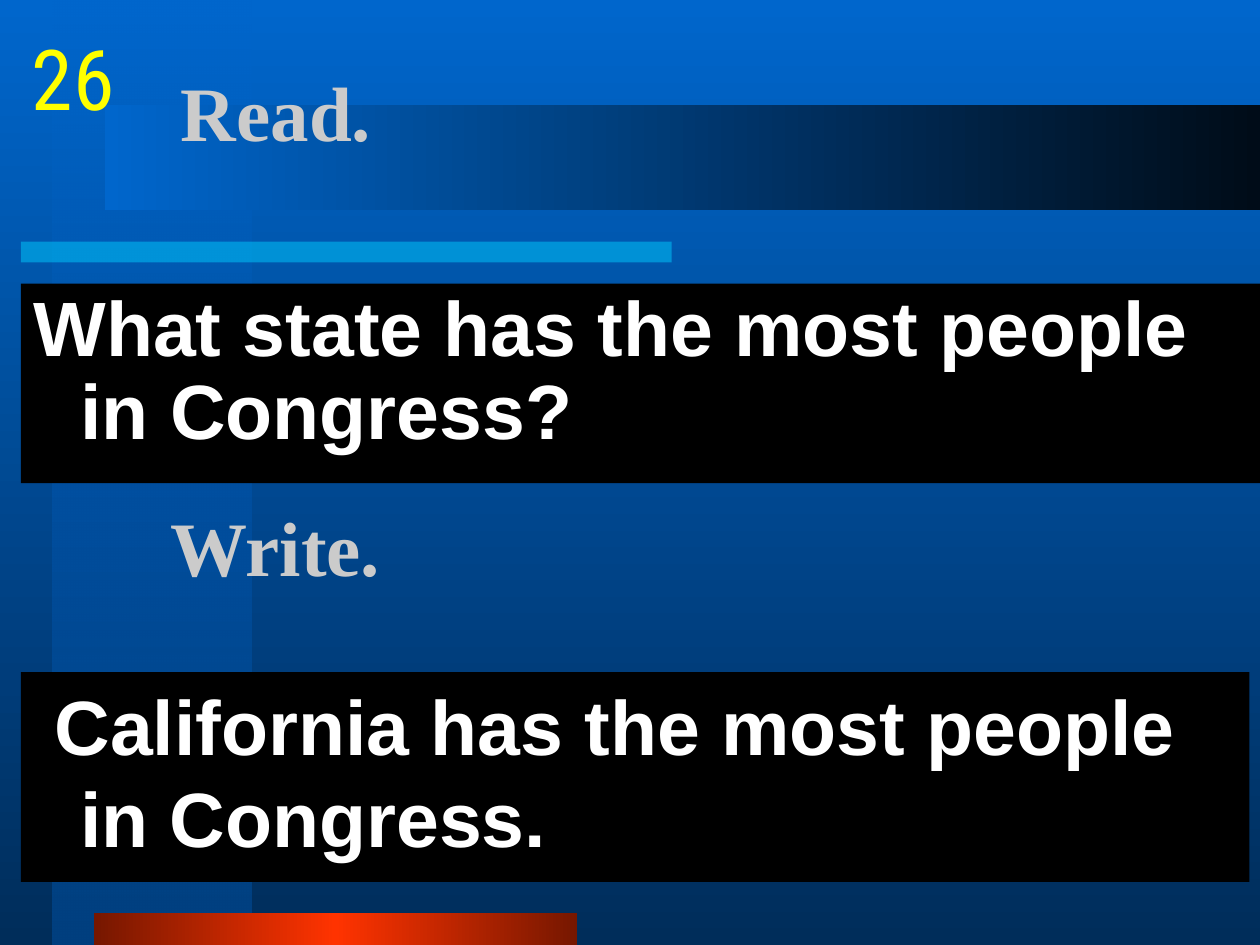
from dataclasses import dataclass

from lxml.etree import SubElement
from pptx import Presentation
from pptx.dml.color import RGBColor
from pptx.enum.shapes import MSO_SHAPE
from pptx.enum.text import MSO_ANCHOR, MSO_AUTO_SIZE, PP_ALIGN
from pptx.oxml.ns import qn
from pptx.util import Cm, Pt


@dataclass(frozen=True)
class Theme:
    blue: str = "0066CC"
    navy: str = "002D5A"
    band_end: str = "004080"
    midnight: str = "000C18"
    cyan: str = "00CCFF"
    red: str = "FF3300"
    dark_red: str = "761700"
    black: str = "000000"
    white: str = "FFFFFF"
    silver: str = "CBCBCB"
    yellow: str = "FFFF00"
    heading_font: str = "Times New Roman"
    body_font: str = "Arial"
    number_font: str = "Roboto Condensed"
    text_size: int = 44
    number_size: int = 48


THEME = Theme()
HEADING = dict(font=THEME.heading_font, color=THEME.silver, bold=True,
               size=THEME.text_size, anchor=MSO_ANCHOR.MIDDLE)
SENTENCE = dict(font=THEME.body_font, color=THEME.white, bold=True,
                size=THEME.text_size, hanging=0.95,
                space_before=0.2 * THEME.text_size)


def set_alpha(color_element, percent):
    SubElement(color_element, qn("a:alpha"), val=str(percent * 1000))


def fill_gradient(fill, stops, angle=0):
    """Fill with (position, colour, opacity) stops; 270 runs top to bottom."""
    fill.gradient()
    fill.gradient_angle = angle
    stop_list = fill.gradient_stops[0]._gs.getparent()
    for stop in list(stop_list):
        stop_list.remove(stop)
    for position, color, opacity in stops:
        stop = SubElement(stop_list, qn("a:gs"), pos=str(position * 1000))
        color_element = SubElement(stop, qn("a:srgbClr"), val=color)
        if opacity < 100:
            set_alpha(color_element, opacity)


def fill_solid(fill, color, opacity=100):
    fill.solid()
    fill.fore_color.rgb = RGBColor.from_string(color)
    if opacity < 100:
        set_alpha(fill._xPr.find(".//" + qn("a:srgbClr")), opacity)


def place(shape, left, top, width, height):
    shape.left, shape.top = Cm(left), Cm(top)
    shape.width, shape.height = Cm(width), Cm(height)


def add_bar(slide, *box):
    bar = slide.shapes.add_shape(MSO_SHAPE.RECTANGLE, *map(Cm, box))
    bar.shadow.inherit = False
    bar.line.fill.background()
    return bar


def write(shape, text, *, font, size, color, bold=False, anchor=MSO_ANCHOR.TOP,
          align=PP_ALIGN.LEFT, wrap=True, hanging=0, space_before=0,
          line_spacing=1.0):
    frame = shape.text_frame
    frame.auto_size = MSO_AUTO_SIZE.NONE
    frame.word_wrap = wrap
    frame.vertical_anchor = anchor
    paragraph = frame.paragraphs[0]
    paragraph.alignment = align
    paragraph.line_spacing = line_spacing
    paragraph.space_before = Pt(space_before)
    properties = paragraph._p.get_or_add_pPr()
    properties.set("marL", str(Cm(hanging)))
    properties.set("indent", str(-Cm(hanging)))
    SubElement(properties, qn("a:buNone"))
    run = paragraph.add_run()
    run.text = text
    run.font.name = font
    run.font.size = Pt(size)
    run.font.bold = bold
    run.font.color.rgb = RGBColor.from_string(color)


def add_decoration(slide):
    fill_gradient(slide.background.fill,
                  [(0, THEME.blue, 100), (100, THEME.navy, 100)], angle=270)
    side_band = add_bar(slide, 1.06, 0, 4.02, 19.05)
    fill_gradient(side_band.fill,
                  [(0, THEME.blue, 50), (100, THEME.band_end, 100)], angle=270)
    fill_solid(add_bar(slide, 0.42, 4.87, 13.12, 0.42).fill, THEME.cyan, 50)
    fill_gradient(add_bar(slide, 1.9, 18.41, 9.74, 0.64).fill,
                  [(0, THEME.dark_red, 100), (50, THEME.red, 100),
                   (100, THEME.dark_red, 100)])
    fill_gradient(add_bar(slide, 2.12, 2.12, 23.28, 2.12).fill,
                  [(0, THEME.blue, 100), (100, THEME.midnight, 100)])


def add_question(slide, title, body):
    for placeholder in (title, body):
        slide.shapes._spTree.append(placeholder._element)  # above the decoration
    place(title, 3.39, 0.64, 21.59, 3.18)
    write(title, "Read.", **HEADING)
    place(body, 0.42, 5.72, 24.98, 4.02)
    fill_solid(body.fill, THEME.black)
    write(body, "What state has the most people in Congress?",
          line_spacing=0.9, **SENTENCE)


def add_answer(slide):
    heading = slide.shapes.add_textbox(Cm(3.18), Cm(8.89), Cm(21.59), Cm(4.23))
    write(heading, "Write.", **HEADING)
    answer = add_bar(slide, 0.42, 13.55, 24.77, 4.23)
    fill_solid(answer.fill, THEME.black)
    write(answer, " California has the most people in Congress.", **SENTENCE)


def add_number(slide):
    number = slide.shapes.add_textbox(Cm(0.42), Cm(0.42), Cm(2.12), Cm(2.12))
    write(number, "26", font=THEME.number_font, size=THEME.number_size,
          color=THEME.yellow, align=PP_ALIGN.CENTER, wrap=False)


def main():
    presentation = Presentation()
    presentation.slide_width, presentation.slide_height = Cm(25.4), Cm(19.05)
    slide = presentation.slides.add_slide(presentation.slide_layouts[1])
    title, body = slide.placeholders
    add_decoration(slide)
    add_question(slide, title, body)
    add_answer(slide)
    add_number(slide)
    presentation.save("out.pptx")


if __name__ == "__main__":
    main()
